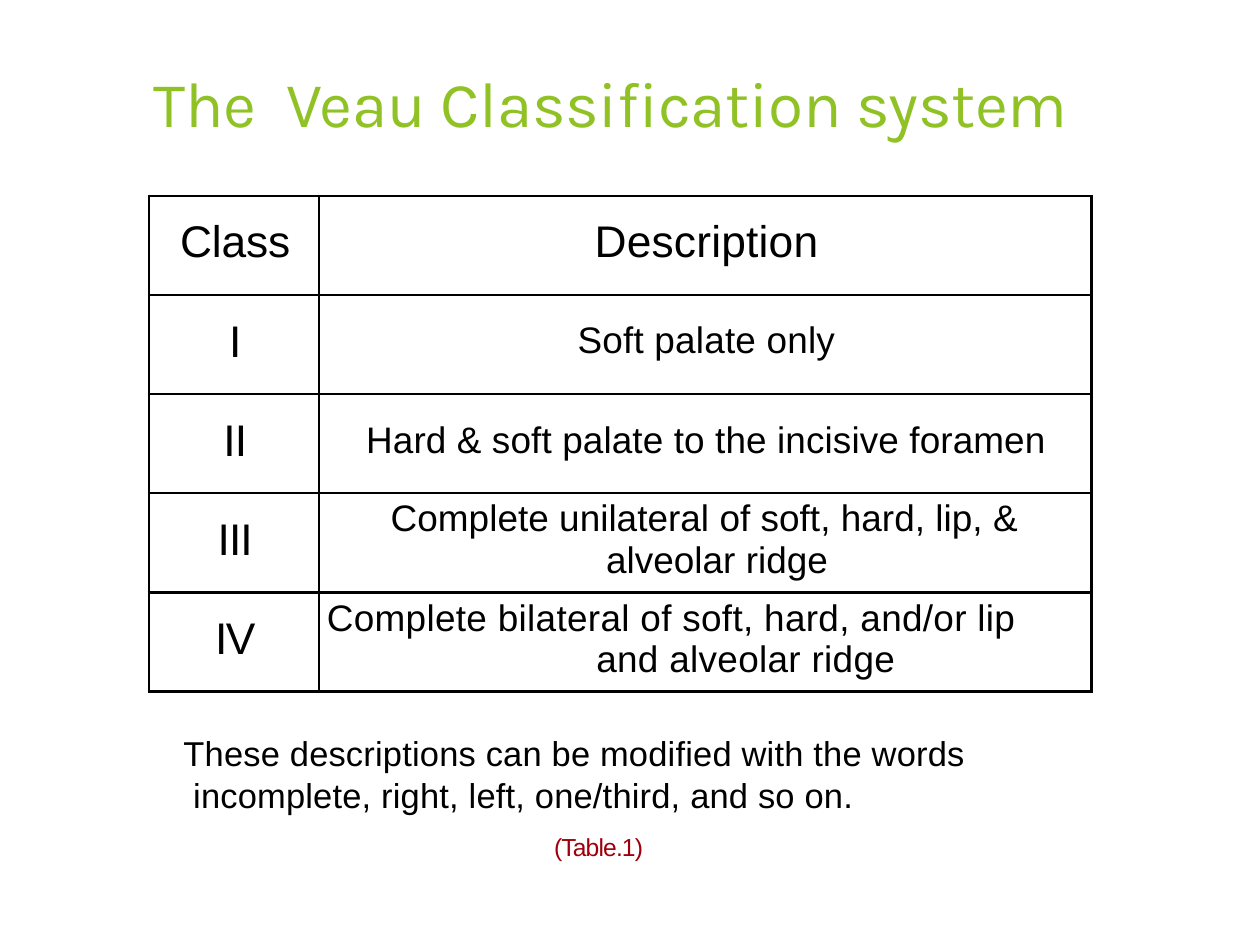
from lxml.etree import SubElement
from pptx import Presentation
from pptx.dml.color import RGBColor
from pptx.enum.text import PP_ALIGN
from pptx.oxml.ns import qn
from pptx.util import Inches, Pt

GREEN = RGBColor(0x90, 0xC2, 0x26)
RED = RGBColor(0x9D, 0x00, 0x0C)
BLACK = RGBColor(0x00, 0x00, 0x00)

HEADER = (("Class", -0.1), ("Description", 0.2))
CLASSES = (("I", 0), ("II", -0.7), ("III", -0.7), ("IV", -1.4))
DESCRIPTIONS = (
    ("Soft palate only", 0.2, None),
    ("Hard & soft palate to the incisive foramen", 0.12, None),
    ("Complete unilateral of soft, hard, lip, & alveolar ridge", 0.07, (3.24, -2.43)),
    ("Complete bilateral of soft, hard, and/or lip and alveolar ridge", 0.27, (3.13, -3.04)),
)


class SlideBuilder:
    """Holds the text style and the current slide, and adds its elements."""

    def __init__(self, slide, font):
        self.slide = slide
        self.font = font

    def paragraph(self, p, text, size, color=BLACK, font=None, spacing=0,
                  before=0, margin=0.0, indent=0.0, align=PP_ALIGN.LEFT):
        p.text = text
        p.alignment = align
        p.space_before = Pt(before)
        pPr = p._p.get_or_add_pPr()
        pPr.set("marL", str(Inches(margin)))
        pPr.set("indent", str(Inches(indent)))
        for r in p.runs:
            r.font.size = Pt(size)
            r.font.name = font or self.font
            r.font.color.rgb = color
            r._r.get_or_add_rPr().set("spc", str(round(spacing * 100)))
        return p

    def tab_stop(self, p, position):
        tabs = SubElement(p._p.get_or_add_pPr(), qn("a:tabLst"))
        SubElement(tabs, qn("a:tab"), pos=str(Inches(position)), algn="l")

    def text_box(self, left, top, width, height):
        sp = self.slide.shapes.add_textbox(
            Inches(left), Inches(top), Inches(width), Inches(height))
        tf = sp.text_frame
        tf.word_wrap = True
        tf.margin_left = tf.margin_right = tf.margin_bottom = 0
        tf.margin_top = Inches(0.01)
        return tf

    def table(self, left, top, widths, row_height, rows):
        shape = self.slide.shapes.add_table(
            rows, len(widths), Inches(left), Inches(top),
            Inches(sum(widths)), Inches(row_height * rows))
        table = shape.table
        table.first_row = table.horz_banding = False
        for column, width in zip(table.columns, widths):
            column.width = Inches(width)
        for row in table.rows:
            row.height = Inches(row_height)
        for cell in table.iter_cells():
            self.border(cell)
            cell.fill.background()
        return table

    def border(self, cell):
        tcPr = cell._tc.get_or_add_tcPr()
        for side in ("lnL", "lnR", "lnT", "lnB"):
            ln = SubElement(tcPr, qn(f"a:{side}"), w=str(Pt(2.25)))
            fill = SubElement(ln, qn("a:solidFill"))
            SubElement(fill, qn("a:srgbClr"), val=str(BLACK))

    def cell(self, cell, text, size, spacing, top, before, hanging=None):
        cell.margin_left = cell.margin_bottom = 0
        cell.margin_right = Inches(0.2 if hanging else 0)
        cell.margin_top = Inches(top)
        margin, indent = hanging or (0.03, 0)
        align = PP_ALIGN.LEFT if hanging else PP_ALIGN.CENTER
        self.paragraph(cell.text_frame.paragraphs[0], text, size, spacing=spacing,
                       before=before, margin=margin, indent=indent, align=align)


def main():
    prs = Presentation()
    prs.slide_width, prs.slide_height = Inches(14.22), Inches(10.67)
    s = SlideBuilder(prs.slides.add_slide(prs.slide_layouts[6]), "Arial")

    title = s.text_box(1.72, 0.71, 10.79, 0.89)
    p = s.paragraph(title.paragraphs[0], "The\tVeau Classification system", 52,
                    GREEN, "Karla", -0.2, before=1, margin=0.01)
    s.tab_stop(p, 1.5)

    table = s.table(1.68, 2.21, (1.92, 8.72), 1.12, len(CLASSES) + 1)
    for col, (text, spacing) in enumerate(HEADER):
        s.cell(table.cell(0, col), text, 36, spacing, 0.25, 18)
    for row, (name, description) in enumerate(zip(CLASSES, DESCRIPTIONS), 1):
        s.cell(table.cell(row, 0), *name[:1], 36, name[1], 0.25, 18)
        text, spacing, hanging = description
        top, before = (0.06, 4) if hanging else (0.29, 21)
        s.cell(table.cell(row, 1), text, 30, spacing, top, before, hanging)

    note = s.text_box(2.06, 8.25, 8.89, 1.49)
    p = s.paragraph(
        note.paragraphs[0],
        "These descriptions can be modified with the words "
        "incomplete, right, left, one/third, and so on.",
        28, spacing=0.2, before=0.6, margin=0.12, indent=-0.11)
    p.line_spacing = 1.01
    s.paragraph(note.add_paragraph(), "(Table.1)", 20, RED, spacing=-0.7,
                before=13.9, margin=0.5, align=PP_ALIGN.CENTER)

    prs.save("out.pptx")


if __name__ == "__main__":
    main()
